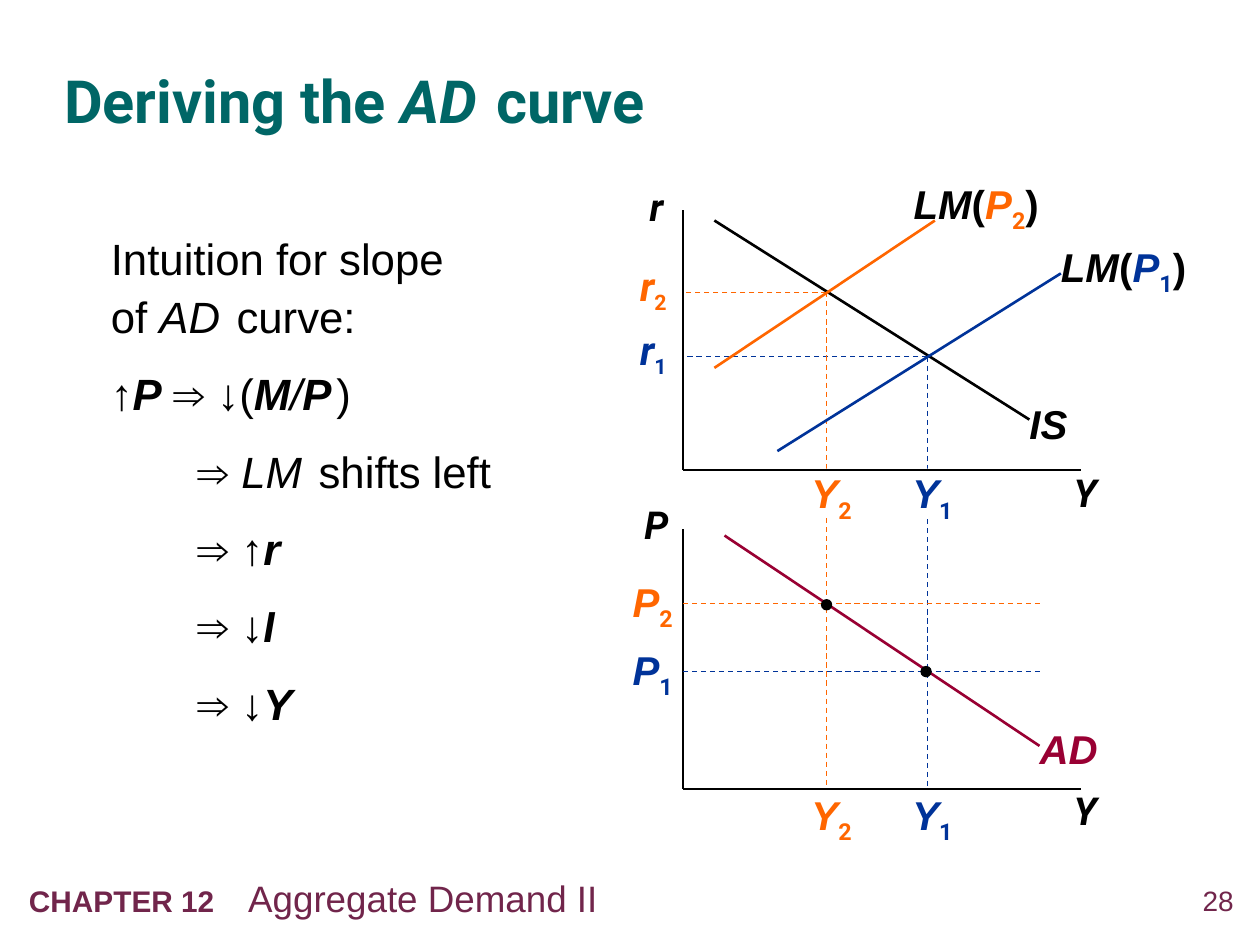
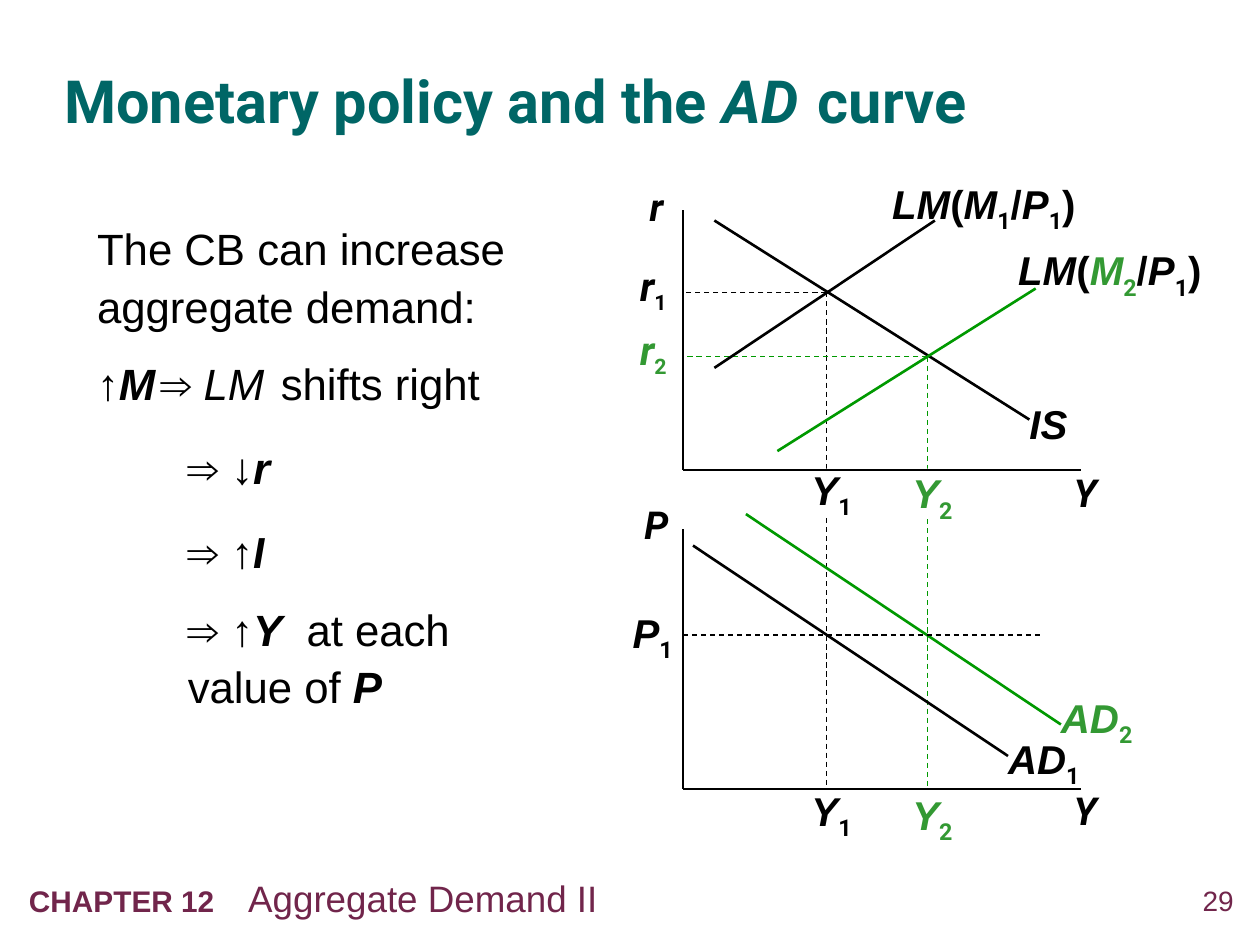
from dataclasses import dataclass

from lxml.etree import SubElement
from pptx import Presentation
from pptx.dml.color import RGBColor
from pptx.enum.dml import MSO_LINE
from pptx.enum.shapes import MSO_CONNECTOR, MSO_SHAPE
from pptx.enum.text import MSO_ANCHOR, MSO_AUTO_SIZE, PP_ALIGN
from pptx.oxml.ns import qn
from pptx.util import Inches, Pt

BLACK = RGBColor(0x00, 0x00, 0x00)
WHITE = RGBColor(0xFF, 0xFF, 0xFF)
TEAL = RGBColor(0x00, 0x66, 0x66)
PLUM = RGBColor(0x71, 0x25, 0x4B)
BLUE = RGBColor(0x00, 0x33, 0x99)
ORANGE = RGBColor(0xFF, 0x66, 0x00)
CRIMSON = RGBColor(0x99, 0x00, 0x33)
GREEN_LINE = RGBColor(0x00, 0x99, 0x00)
GREEN_TEXT = RGBColor(0x33, 0x99, 0x33)

SANS, DISPLAY = "Arial", "Roboto"
LABEL_SIZE, BODY_SIZE = 23, 25
STEP_INDENT = 0.69

# Left and top of the two plots, and the size of both
GOODS_MONEY_PLOT = (5.42, 1.67)
DEMAND_PLOT = (5.42, 4.2)
PLOT_WIDTH, PLOT_HEIGHT = 3.16, 2.06
# Equilibria in the upper plot: output and interest rate
LOW_OUTPUT = (1.14, 0.65)
HIGH_OUTPUT = (1.94, 1.16)


@dataclass
class Span:
    text: str
    bold: bool = False
    italic: bool = False
    color: RGBColor = BLACK
    font: str = SANS
    size: float = 0
    subscript: bool = False


@dataclass
class Line:
    spans: list
    indent: float = 0
    gap: float = 11.25
    tab: float = STEP_INDENT


def variable(letter, color=BLACK, font=SANS, size=0):
    return Span(letter, True, True, color, font, size)


def symbol(letter, index, color=BLACK):
    """A bold italic letter with an upright subscript."""
    is_rate = letter == "r"
    return [variable(letter, color, DISPLAY if is_rate else SANS),
            Span(index, True, False, color, DISPLAY, 21 if is_rate else 0, True)]


def curve_name(*parts):
    return [variable("LM"), Span("(", True), *parts, Span(")", True)]


def italic_name(name, size, following):
    """An italic name, a narrow space, and the upright text after it."""
    return [Span(name, italic=True), Span(" ", size=size), Span(following)]


def add_spans(para, spans, size):
    for span in spans:
        for number, piece in enumerate(span.text.split("\n")):
            if number:
                para.add_line_break()
            run = para.add_run()
            run.text = piece
            font = run.font
            font.name, font.size = span.font, Pt(span.size or size)
            font.bold, font.italic = span.bold, span.italic
            font.color.rgb = span.color
            if span.subscript:
                run._r.get_or_add_rPr().set("baseline", "-25000")


def set_frame(frame, inset=0, anchor=MSO_ANCHOR.TOP):
    frame.word_wrap = True
    frame.auto_size = MSO_AUTO_SIZE.NONE
    frame.vertical_anchor = anchor
    frame.margin_left = frame.margin_right = Inches(inset)
    frame.margin_top = frame.margin_bottom = Inches(inset / 2)


def place(shape, left, top, width, height):
    shape.left, shape.top = Inches(left), Inches(top)
    shape.width, shape.height = Inches(width), Inches(height)


def add_label(page, left, top, spans, width=0.42, height=0.38, size=LABEL_SIZE,
              align=PP_ALIGN.LEFT, anchor=MSO_ANCHOR.TOP, filled=False):
    box = page.shapes.add_textbox(Inches(left), Inches(top), Inches(width), Inches(height))
    set_frame(box.text_frame, anchor=anchor)
    if filled:
        box.fill.solid()
        box.fill.fore_color.rgb = WHITE
    para = box.text_frame.paragraphs[0]
    para.alignment = align
    add_spans(para, spans, size)
    return para


def add_line(page, plot, start, end, color, weight, dashed=False):
    """Draw a line between two points measured from the plot's corner."""
    left, top = plot
    line = page.shapes.add_connector(
        MSO_CONNECTOR.STRAIGHT, Inches(left + start[0]), Inches(top + start[1]),
        Inches(left + end[0]), Inches(top + end[1]))
    line.line.color.rgb = color
    line.line.width = Pt(weight)
    if dashed:
        line.line.dash_style = MSO_LINE.DASH
    SubElement(line._element.spPr, qn("a:effectLst"))


# Plot parts
def add_axes(page, plot, vertical_name):
    left, top = plot
    origin = (0, PLOT_HEIGHT)
    add_line(page, plot, (0, 0), origin, BLACK, 1)
    add_line(page, plot, origin, (PLOT_WIDTH, PLOT_HEIGHT), BLACK, 1)
    add_label(page, left + 3.1, top + 2.05, [variable("Y", font=DISPLAY)], size=22)
    add_label(page, left - 0.42, top - 0.22, [variable(vertical_name, font=DISPLAY)],
              size=22, align=PP_ALIGN.CENTER)


def add_curve(page, plot, start, end, color, spans, shift, width=0.75):
    add_line(page, plot, start, end, color, 1.5)
    add_label(page, plot[0] + end[0] + shift[0], plot[1] + end[1] + shift[1], spans, width)


def add_demand_curve(page, start, color, spans, rise=0.17):
    end = (start[0] + 2.5, start[1] + 1.67)
    add_curve(page, DEMAND_PLOT, start, end, color, spans, (0, -rise))


def add_equilibrium(page, point, index, color, text_color, anchor=MSO_ANCHOR.TOP):
    """Dashed guides from an equilibrium to its rate and, through both plots, its output."""
    plot = GOODS_MONEY_PLOT
    output, rate = point
    floor = DEMAND_PLOT[1] + PLOT_HEIGHT
    add_line(page, plot, point, (output, floor - plot[1]), color, 0.75, True)
    add_line(page, plot, point, (0, rate), color, 0.75, True)
    name_left = plot[0] + output - 0.12
    output_name = symbol("Y", index, text_color)
    add_label(page, name_left, DEMAND_PLOT[1] - 0.48, output_name, anchor=anchor,
              height=0.38, filled=True)
    add_label(page, name_left, floor + 0.01, output_name, anchor=anchor)
    add_label(page, plot[0] - 0.34, plot[1] + rate - 0.25, symbol("r", index, text_color))


def add_price_level(page, height, index, color):
    left, top = DEMAND_PLOT
    add_line(page, DEMAND_PLOT, (0, height), (2.83, height), color, 0.75, True)
    add_label(page, left - 0.4, top + height - 0.21, symbol("P", index, color))


def add_dot(page, x, y, size=0.08):
    left, top = DEMAND_PLOT
    dot = page.shapes.add_shape(
        MSO_SHAPE.OVAL, Inches(left + x - size / 2), Inches(top + y - size / 2),
        Inches(size), Inches(size))
    dot.shadow.inherit = False
    dot.fill.solid()
    dot.fill.fore_color.rgb = BLACK
    dot.line.color.rgb = BLACK
    dot.line.width = Pt(0.75)


def add_plots(page):
    add_axes(page, GOODS_MONEY_PLOT, "r")
    add_axes(page, DEMAND_PLOT, "P")
    add_curve(page, GOODS_MONEY_PLOT, (0.25, 0.08), (2.75, 1.66), BLACK,
              [variable("IS")], (0, -0.16))


def add_left_money_curve(page, color, spans, shift, width):
    add_curve(page, GOODS_MONEY_PLOT, (0.25, 1.25), (2, 0.08), color, spans,
              (shift, -0.33), width)


def add_right_money_curve(page, end, color, spans, shift, width):
    add_curve(page, GOODS_MONEY_PLOT, (0.75, 1.91), end, color, spans, shift, width)


# Title, list and footer
def fill_title(page, opening):
    title = page.shapes.title
    place(title, 0.51, 0.26, 9.02, 1.03)
    set_frame(title.text_frame, anchor=MSO_ANCHOR.MIDDLE)
    para = title.text_frame.paragraphs[0]
    para.alignment = PP_ALIGN.LEFT
    para.line_spacing = 1.05
    add_spans(para, [Span(opening, True, False, TEAL, DISPLAY),
                     variable("AD", TEAL, DISPLAY), variable(" ", TEAL, DISPLAY, 11),
                     Span(" curve", True, False, TEAL, DISPLAY)], 34)


def fill_body(page, box, lines):
    body = page.placeholders[1]
    place(body, *box)
    frame = body.text_frame
    set_frame(frame, 0.1)
    for number, line in enumerate(lines):
        para = frame.add_paragraph() if number else frame.paragraphs[0]
        para.line_spacing = 1.1
        para.space_before = Pt(line.gap if number else 0)
        properties = para._p.get_or_add_pPr()
        properties.set("marL", str(Inches(line.indent)))
        properties.set("indent", "0")
        SubElement(properties, qn("a:buNone"))
        tabs = SubElement(properties, qn("a:tabLst"))
        SubElement(tabs, qn("a:tab"), pos=str(Inches(line.tab)), algn="l")
        add_spans(para, line.spans, BODY_SIZE)


def add_footer(page, number):
    chapter = add_label(page, 0.23, 6.95, [
        Span("CHAPTER 12\t", True, color=PLUM, size=17),
        Span("Aggregate Demand II", color=PLUM)], 8, 0.35, 21)
    tabs = SubElement(chapter._p.get_or_add_pPr(), qn("a:tabLst"))
    SubElement(tabs, qn("a:tab"), pos=str(Inches(1.74)), algn="l")
    add_label(page, 9.24, 7.01, [Span(str(number), color=PLUM)], 0.55, 0.32, 16,
              PP_ALIGN.RIGHT)


def start_page(deck, title, number):
    page = deck.slides.add_slide(deck.slide_layouts[1])
    fill_title(page, title)
    add_footer(page, number)
    return page


def step(spans, gap=11.25, indent=STEP_INDENT):
    return Line(spans, indent, gap)


# Slide types
def build_derivation(deck):
    page = start_page(deck, "Deriving the ", 28)
    add_equilibrium(page, HIGH_OUTPUT, "1", BLUE, BLUE)
    add_equilibrium(page, LOW_OUTPUT, "2", ORANGE, ORANGE)
    add_plots(page)
    add_right_money_curve(page, (3, 0.5), BLUE, curve_name(*symbol("P", "1", BLUE)),
                          (0, -0.25), 1.08)
    add_left_money_curve(page, ORANGE, curve_name(*symbol("P", "2", ORANGE)), -0.17, 1.08)
    add_demand_curve(page, (0.33, 0.05), CRIMSON, [variable("AD", CRIMSON)])
    add_price_level(page, 1.13, "1", BLUE)
    add_price_level(page, 0.59, "2", ORANGE)
    add_dot(page, 1.93, 1.13)
    add_dot(page, 1.14, 0.6)
    fill_body(page, (0.78, 1.75, 3.58, 4.42), [
        Line([Span("Intuition for slope\nof "), *italic_name("AD", 9, " curve:")]),
        Line([Span("↑"), variable("P"), Span("\t⇒ ↓("), variable("M"),
              Span("/", italic=True), variable("P"), variable(" ", size=10), Span(")")]),
        step([Span("⇒ "), *italic_name("LM", 9, " shifts left")]),
        step([Span("⇒ ↑"), variable("r")]),
        step([Span("⇒ ↓"), variable("I", font=DISPLAY, size=24)]),
        step([Span("⇒ ↓"), variable("Y")]),
    ])


def build_monetary_policy(deck):
    page = start_page(deck, "Monetary policy and the ", 29)
    add_equilibrium(page, LOW_OUTPUT, "1", BLACK, BLACK, MSO_ANCHOR.MIDDLE)
    add_equilibrium(page, HIGH_OUTPUT, "2", GREEN_LINE, GREEN_TEXT)
    add_plots(page)
    price_part = [Span("/", True), *symbol("P", "1")]
    add_right_money_curve(page, (2.8, 0.62), GREEN_LINE,
                          curve_name(*symbol("M", "2", GREEN_TEXT), *price_part),
                          (-0.14, -0.34), 1.58)
    add_left_money_curve(page, BLACK, curve_name(*symbol("M", "1"), *price_part), -0.34, 1.83)
    add_demand_curve(page, (0.08, 0.13), BLACK, symbol("AD", "1"))
    add_demand_curve(page, (0.5, -0.12), GREEN_LINE, symbol("AD", "2", GREEN_TEXT), 0.25)
    add_price_level(page, 0.84, "1", BLACK)
    indent = STEP_INDENT + 0.03
    fill_body(page, (0.67, 1.67, 4.08, 4.14), [
        Line([Span("The CB can increase aggregate demand:")]),
        Line([Span("↑"), variable("M"), Span("\t⇒ "),
              *italic_name("LM", 9, " shifts right")], tab=0.63),
        step([Span("⇒ ↓"), variable("r")], 15, indent),
        step([Span("⇒ ↑"), variable("I", font=DISPLAY, size=24)], 15, indent),
        step([Span("⇒ ↑"), variable("Y"), Span("  at each\nvalue of "), variable("P")],
             indent=indent),
    ])


def main():
    deck = Presentation()
    deck.slide_width, deck.slide_height = Inches(10), Inches(7.5)
    build_derivation(deck)
    build_monetary_policy(deck)
    deck.save("out.pptx")


if __name__ == "__main__":
    main()
